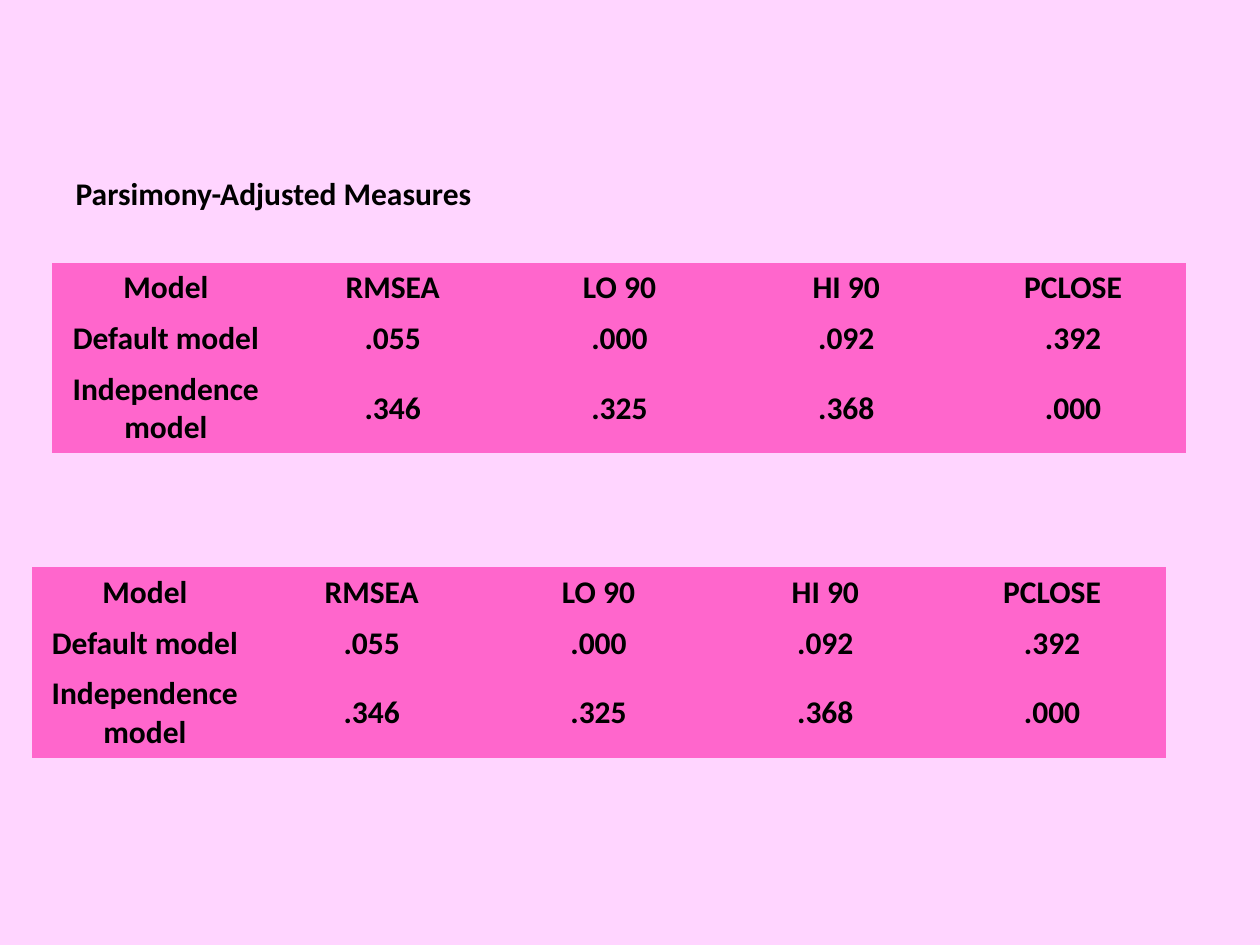
import dataclasses

import pptx
import pptx.dml.color
import pptx.enum.text
import pptx.util

Pt = pptx.util.Pt
RGBColor = pptx.dml.color.RGBColor


@dataclasses.dataclass(frozen=True)
class Theme:
    """Colours, type and table style used on the slide."""

    background: RGBColor = RGBColor(0xFF, 0xD5, 0xFF)
    cell: RGBColor = RGBColor(0xFF, 0x66, 0xCC)
    text: RGBColor = RGBColor(0, 0, 0)
    font: str = "Calibri"
    size: int = 18
    plain_table_style: str = "{2D5ABB26-0587-4C30-8999-92F81FD0307C}"


THEME = Theme()
FIT_ROWS = (
    ("Model", "RMSEA", "LO 90", "HI 90", "PCLOSE"),
    ("Default model", ".055", ".000", ".092", ".392"),
    ("Independence model", ".346", ".325", ".368", ".000"),
)
ROW_HEIGHTS = (29, 29, 51)
TITLE_BOX = (36, 96, 243, 29)
TABLE_BOXES = ((18, 324, 648, 109), (30, 150, 648, 109))


def format_paragraph(paragraph, alignment):
    """Apply the theme's bold type and an alignment to a paragraph."""
    paragraph.alignment = alignment
    font = paragraph.font
    font.name = THEME.font
    font.size = Pt(THEME.size)
    font.bold = True
    font.color.rgb = THEME.text


def place_title(slide, box):
    """Place the slide title in the given box."""
    title = slide.shapes.title
    title.left, title.top, title.width, title.height = map(Pt, box)
    frame = title.text_frame
    frame.text = "Parsimony-Adjusted Measures"
    frame.word_wrap = False
    frame.auto_size = pptx.enum.text.MSO_AUTO_SIZE.SHAPE_TO_FIT_TEXT
    frame.vertical_anchor = pptx.enum.text.MSO_ANCHOR.TOP
    paragraph = frame.paragraphs[0]
    paragraph.line_spacing = 1.0
    paragraph.space_before = Pt(0)
    format_paragraph(paragraph, pptx.enum.text.PP_ALIGN.LEFT)


def place_fit_table(slide, box):
    """Place a table of the model fit measures in the given box."""
    frame = slide.shapes.add_table(len(FIT_ROWS), len(FIT_ROWS[0]), *map(Pt, box))
    table = frame.table
    table.first_row = False
    table.horz_banding = False
    properties = frame.element.graphic.graphicData.tbl.tblPr
    properties.find(pptx.oxml.ns.qn("a:tableStyleId")).text = THEME.plain_table_style
    for row, height, values in zip(table.rows, ROW_HEIGHTS, FIT_ROWS):
        row.height = Pt(height)
        for cell, value in zip(row.cells, values):
            cell.text = value
            cell.vertical_anchor = pptx.enum.text.MSO_ANCHOR.MIDDLE
            cell.fill.solid()
            cell.fill.fore_color.rgb = THEME.cell
            format_paragraph(
                cell.text_frame.paragraphs[0], pptx.enum.text.PP_ALIGN.CENTER
            )


def main():
    """Build and save the presentation."""
    presentation = pptx.Presentation()
    presentation.slide_width = Pt(720)
    presentation.slide_height = Pt(540)
    slide = presentation.slides.add_slide(
        presentation.slide_layouts.get_by_name("Title Only")
    )
    slide.background.fill.solid()
    slide.background.fill.fore_color.rgb = THEME.background
    place_title(slide, TITLE_BOX)
    for box in TABLE_BOXES:
        place_fit_table(slide, box)
    presentation.save("out.pptx")


if __name__ == "__main__":
    main()
